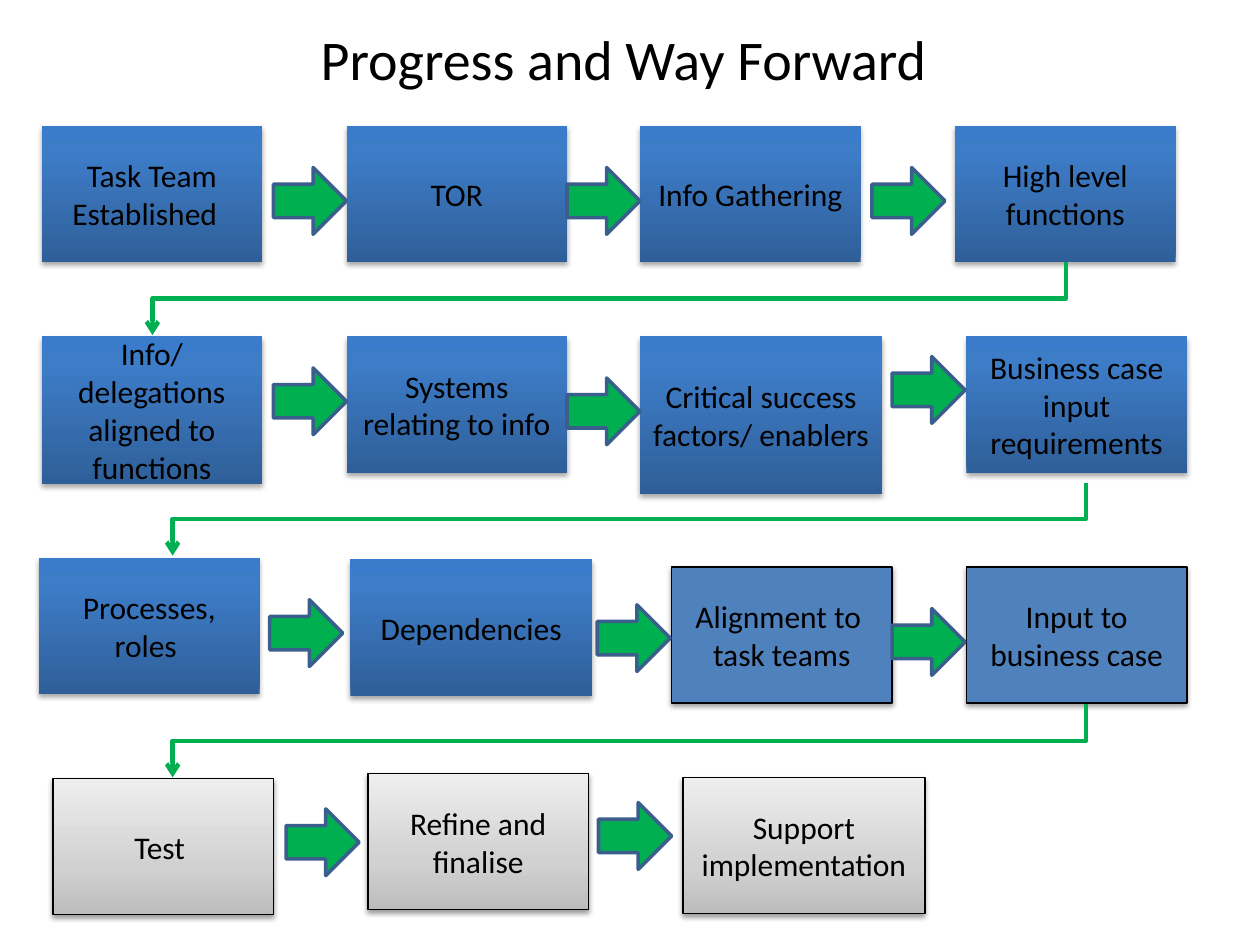
import dataclasses

import lxml.etree
import pptx
import pptx.dml.color
import pptx.enum.shapes
import pptx.enum.text
import pptx.oxml.ns
import pptx.util

Inches = pptx.util.Inches
Pt = pptx.util.Pt
qn = pptx.oxml.ns.qn
SHAPE = pptx.enum.shapes.MSO_SHAPE


@dataclasses.dataclass(frozen=True)
class BoxStyle:
    stops: tuple  # (percent, colour) from bottom to top; one stop is a solid fill
    outlined: bool
    shadow_alpha: int
    shadow_distance: float


@dataclasses.dataclass(frozen=True)
class Theme:
    font: str = "Calibri"
    title_size: int = 32
    body_size: int = 18
    text: str = "000000"
    outline: str = "000000"
    green: str = "00B050"
    arrow_line: str = "3A5F8C"
    done: BoxStyle = BoxStyle(
        ((0, "2F5F99"), (80, "3D7CC7"), (100, "3A7CCB")), False, 35, 1.8)
    current: BoxStyle = BoxStyle(((0, "4F81BD"),), True, 38, 1.6)
    planned: BoxStyle = BoxStyle(
        ((0, "BDBDBD"), (35, "D1D1D1"), (100, "EEEEEE")), True, 38, 1.6)


def rgb(value):
    return pptx.dml.color.RGBColor.from_string(value)


def add_xml(parent, tag, **attributes):
    """Append a DrawingML element and return it."""
    child = lxml.etree.SubElement(parent, qn(tag))
    for name, value in attributes.items():
        child.set(name, str(value))
    return child


class FlowSlide:
    """Draws process-flow elements on one slide in one theme."""

    def __init__(self, slide, theme):
        self.slide = slide
        self.theme = theme

    def format_text(self, tf, size):
        tf.word_wrap = True
        tf.vertical_anchor = pptx.enum.text.MSO_ANCHOR.MIDDLE
        for p in tf.paragraphs:
            p.alignment = pptx.enum.text.PP_ALIGN.CENTER
            for r in p.runs:
                r.font.name = self.theme.font
                r.font.size = Pt(size)
                r.font.color.rgb = rgb(self.theme.text)

    def title(self, text, left, top, width, height):
        sp = self.slide.shapes.title
        sp.left, sp.top = Inches(left), Inches(top)
        sp.width, sp.height = Inches(width), Inches(height)
        sp.text_frame.text = text
        self.format_text(sp.text_frame, self.theme.title_size)

    def shape(self, kind, left, top, width, height):
        sp = self.slide.shapes.add_shape(
            kind, Inches(left), Inches(top), Inches(width), Inches(height))
        sp.shadow.inherit = False
        return sp

    def gradient(self, sp, stops):
        sp.fill.gradient()
        sp.fill.gradient_angle = 90
        gs_list = sp._element.spPr.find(".//" + qn("a:gsLst"))
        for gs in list(gs_list):
            gs_list.remove(gs)
        for percent, color in stops:
            gs = add_xml(gs_list, "a:gs", pos=percent * 1000)
            add_xml(gs, "a:srgbClr", val=color)

    def drop_shadow(self, sp, style):
        effects = sp._element.spPr.find(qn("a:effectLst"))
        shadow = add_xml(effects, "a:outerShdw", blurRad=int(Pt(3.1)),
                         dist=int(Pt(style.shadow_distance)), dir=5400000,
                         rotWithShape=0)
        color = add_xml(shadow, "a:srgbClr", val="000000")
        add_xml(color, "a:alpha", val=style.shadow_alpha * 1000)

    def box(self, text, style, left, top, width=1.75, height=1.08):
        sp = self.shape(SHAPE.FLOWCHART_PROCESS, left, top, width, height)
        if len(style.stops) > 1:
            self.gradient(sp, style.stops)
        else:
            sp.fill.solid()
            sp.fill.fore_color.rgb = rgb(style.stops[0][1])
        if style.outlined:
            sp.line.color.rgb = rgb(self.theme.outline)
            sp.line.width = Pt(0.75)
        else:
            sp.line.fill.background()
        self.drop_shadow(sp, style)
        sp.text_frame.text = text
        self.format_text(sp.text_frame, self.theme.body_size)

    def arrow(self, left, top):
        sp = self.shape(SHAPE.RIGHT_ARROW, left, top, 0.58, 0.53)
        sp.fill.solid()
        sp.fill.fore_color.rgb = rgb(self.theme.green)
        sp.line.color.rgb = rgb(self.theme.arrow_line)
        sp.line.width = Pt(2)

    def row_link(self, right, top, span=7.25, drop=0.58):
        """Lead from the end of one row down to the start of the next.

        An elbow runs sideways first, so it is laid out upright about the
        same centre and then turned a quarter.
        """
        x = right - span / 2 - drop / 2
        y = top + drop / 2 - span / 2
        line = self.slide.shapes.add_connector(
            pptx.enum.shapes.MSO_CONNECTOR.ELBOW,
            Inches(x), Inches(y), Inches(x + drop), Inches(y + span))
        line.line.color.rgb = rgb(self.theme.green)
        line.line.width = Pt(2.5)
        sp_pr = line._element.spPr
        sp_pr.find(qn("a:xfrm")).set("rot", "5400000")
        add_xml(sp_pr.find(qn("a:ln")), "a:tailEnd", type="arrow")
        add_xml(sp_pr, "a:effectLst")


def main():
    prs = pptx.Presentation()
    prs.slide_width, prs.slide_height = Inches(10), Inches(7.5)
    theme = Theme()
    s = FlowSlide(prs.slides.add_slide(prs.slide_layouts[5]), theme)
    s.title("Progress and Way Forward ", 0.5, 0, 9, 0.92)

    done, current, planned = theme.done, theme.current, theme.planned
    steps = [
        ("Task Team Established  ", done, 0.33, 1),
        ("TOR", done, 2.75, 1),
        ("Info Gathering", done, 5.08, 1),
        ("High level functions", done, 7.58, 1),
        ("Info/ delegations aligned to functions", done, 0.33, 2.67, 1.75, 1.17),
        ("Systems relating to info", done, 2.75, 2.67),
        ("Critical success factors/ enablers", done, 5.08, 2.67, 1.92, 1.25),
        ("Business case input requirements", done, 7.67, 2.67),
        ("Processes, roles ", done, 0.31, 4.43),
        ("Dependencies", done, 2.78, 4.44, 1.92),
        ("Alignment to  task teams", current, 5.33, 4.5),
        ("Input to business case", current, 7.67, 4.5),
        ("Test ", planned, 0.42, 6.18),
        ("Refine and finalise", planned, 2.92, 6.14),
        ("Support implementation", planned, 5.42, 6.17, 1.92),
    ]
    for step in steps:
        s.box(*step)

    arrows = [
        (2.17, 1.33), (4.5, 1.33), (6.92, 1.33),
        (2.17, 2.92), (4.5, 3), (7.08, 2.83),
        (2.14, 4.76), (4.74, 4.8), (7.08, 4.83),
        (2.27, 6.42), (4.75, 6.37),
    ]
    for left, top in arrows:
        s.arrow(left, top)

    for right, top in [(8.46, 2.08), (8.62, 3.83), (8.62, 5.59)]:
        s.row_link(right, top)

    prs.save("out.pptx")


if __name__ == "__main__":
    main()
